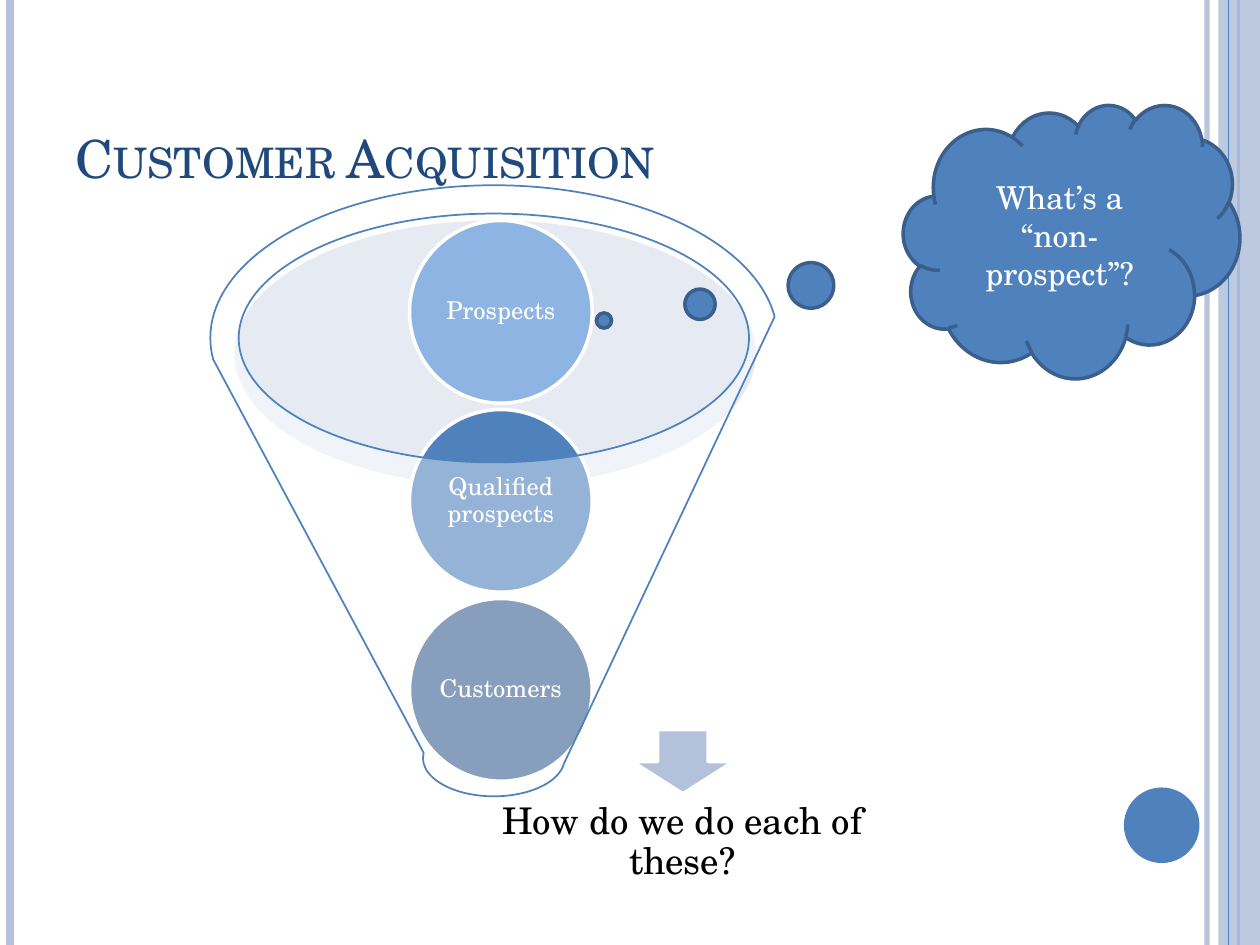
from dataclasses import dataclass
from typing import Any, Optional

from lxml.etree import SubElement
from pptx import Presentation
from pptx.dml.color import RGBColor
from pptx.enum.shapes import MSO_CONNECTOR, MSO_SHAPE
from pptx.enum.text import MSO_ANCHOR, PP_ALIGN
from pptx.oxml.ns import qn
from pptx.util import Inches, Pt

FONT = "TeX Gyre Schola"
BLUE, PALE, WHITE = "4F81BD", "B3C1DB", "FFFFFF"
PAGE_WIDTH, PAGE_HEIGHT = 10, 7.5


@dataclass
class Rule:
    x: float
    color: str
    weight: float
    opacity: int = 100


@dataclass
class Figure:
    preset: MSO_SHAPE
    box: tuple[float, float, float, float]
    fill: str
    opacity: int = 100
    line: Optional[str] = None
    weight: float = 2


@dataclass
class Label:
    text: str
    size: float
    color: str = WHITE
    inset: Optional[float] = None
    spacing: float = 1.0
    align: PP_ALIGN = PP_ALIGN.CENTER
    anchor: MSO_ANCHOR = MSO_ANCHOR.MIDDLE
    small_caps: bool = False


def paint(fill: Any, color: str, opacity: int = 100) -> None:
    fill.solid()
    fill.fore_color.rgb = RGBColor.from_string(color)
    if opacity < 100:
        tint = fill._xPr.find(qn("a:solidFill"))[0]
        SubElement(tint, qn("a:alpha"), val=str(opacity * 1000))


def apply(target: Any, formats: dict[str, Any]) -> None:
    for name, value in formats.items():
        setattr(target, name, value)


def draw_rule(page: Any, rule: Rule) -> None:
    connector = page.shapes.add_connector(
        MSO_CONNECTOR.STRAIGHT, Inches(rule.x), 0, Inches(rule.x), Inches(PAGE_HEIGHT)
    )
    paint(connector.line.fill, rule.color, rule.opacity)
    connector.line.width = Pt(rule.weight)
    SubElement(connector._element.spPr, qn("a:effectLst"))


def draw_figure(page: Any, figure: Figure) -> Any:
    shape = page.shapes.add_shape(figure.preset, *map(Inches, figure.box))
    shape.shadow.inherit = False
    paint(shape.fill, figure.fill, figure.opacity)
    if figure.line:
        paint(shape.line.fill, figure.line)
        shape.line.width = Pt(figure.weight)
    else:
        shape.line.fill.background()
    return shape


def write_label(shape: Any, label: Label) -> None:
    frame = shape.text_frame
    apply(frame, {"word_wrap": True, "vertical_anchor": label.anchor})
    if label.inset is not None:
        sides = ("left", "top", "right", "bottom")
        apply(frame, {f"margin_{side}": Inches(label.inset) for side in sides})
    para = frame.paragraphs[0]
    para.text = label.text
    apply(para, {"alignment": label.align, "line_spacing": label.spacing})
    for span in para.runs:
        apply(span.font, {"name": FONT, "size": Pt(label.size)})
        paint(span.font.fill, label.color)
        if label.small_caps:
            span.font._element.set("cap", "small")


def draw_text(page: Any, box: tuple[float, float, float, float], label: Label) -> None:
    write_label(page.shapes.add_textbox(*map(Inches, box)), label)


def draw_frame(page: Any) -> None:
    for rule in (Rule(9.58, PALE, 3, 93), Rule(0.08, PALE, 4.5), Rule(9.83, BLUE, 1.5)):
        draw_rule(page, rule)
    band = (9.67, 0, PAGE_WIDTH - 9.67, PAGE_HEIGHT)
    draw_figure(page, Figure(MSO_SHAPE.RECTANGLE, band, PALE, 87))
    draw_rule(page, Rule(9.75, BLUE, 0.75))
    draw_figure(page, Figure(MSO_SHAPE.OVAL, (8.92, 6.25, 0.6, 0.6), BLUE))


def draw_funnel(page: Any) -> None:
    draw_figure(page, Figure(MSO_SHAPE.OVAL, (1.86, 1.75, 4.14, 2.11), "C2CDE1", 40))
    draw_figure(page, Figure(MSO_SHAPE.DOWN_ARROW, (5.02, 5.79, 0.8, 0.51), PALE, line=WHITE))
    draw_text(
        page,
        (3.49, 6.21, 3.85, 0.96),
        Label("How do we do each of these?", 21, "000000", inset=0.16, spacing=0.9),
    )
    stages = (("Customers", "376092"), ("Qualified\vprospects", BLUE), ("Prospects", "8EB4E3"))
    for index, (name, color) in enumerate(stages):
        box = (3.25, 4.75 - 1.5 * index, 1.45, 1.45)
        circle = draw_figure(page, Figure(MSO_SHAPE.OVAL, box, color, line=WHITE))
        write_label(circle, Label(name, 14, inset=0.02, spacing=0.9))
    outline = Figure(MSO_SHAPE.FUNNEL, (1.67, 1.47, 4.5, 4.85), WHITE, 40, BLUE, 1)
    draw_figure(page, outline)


def draw_thought(page: Any) -> None:
    cloud = draw_figure(
        page, Figure(MSO_SHAPE.CLOUD_CALLOUT, (7.17, 0.83, 2.67, 2.17), BLUE, line="3A5F8C")
    )
    cloud.adjustments[0] = -1.39
    cloud.adjustments[1] = 0.29
    write_label(cloud, Label("What’s a “non-prospect”?", 18))


def main() -> None:
    deck = Presentation()
    apply(deck, {"slide_width": Inches(PAGE_WIDTH), "slide_height": Inches(PAGE_HEIGHT)})
    page = deck.slides.add_slide(deck.slide_layouts[6])
    paint(page.background.fill, WHITE)
    draw_frame(page)
    title = Label(
        "Customer Acquisition", 30, "1F497D",
        align=PP_ALIGN.LEFT, anchor=MSO_ANCHOR.BOTTOM, small_caps=True,
    )
    draw_text(page, (0.5, 0.3, 8.17, 1.25), title)
    draw_funnel(page)
    draw_thought(page)
    deck.save("out.pptx")


if __name__ == "__main__":
    main()
